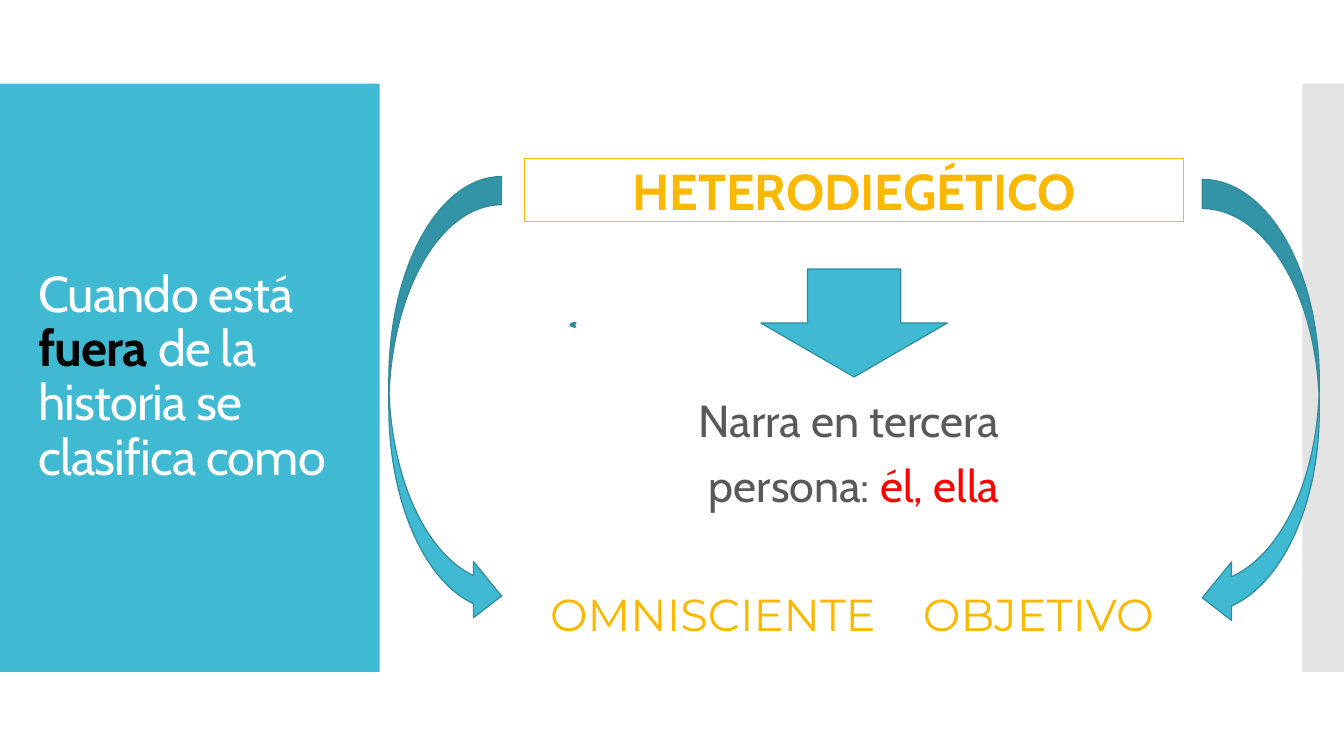
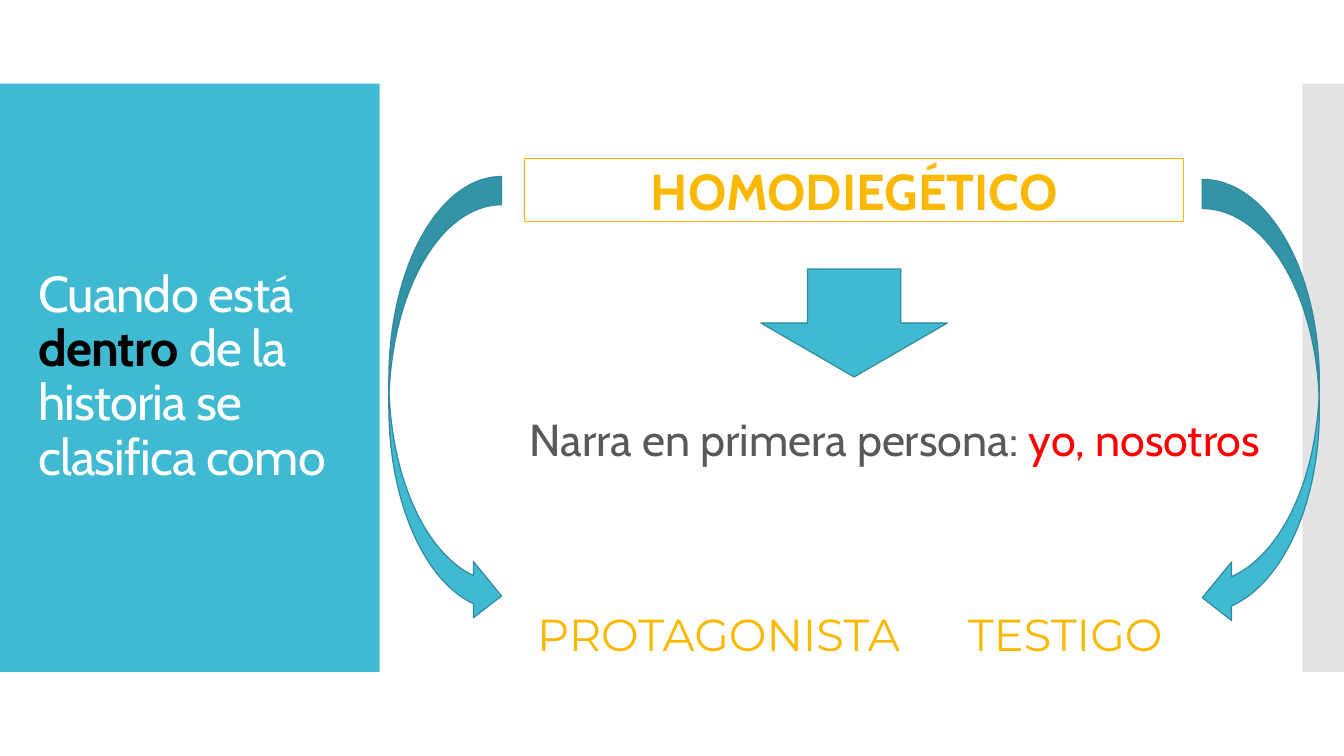
from dataclasses import dataclass

from pptx import Presentation
from pptx.dml.color import RGBColor
from pptx.enum.shapes import MSO_SHAPE as Preset
from pptx.enum.text import MSO_ANCHOR as Anchor, MSO_AUTO_SIZE as AutoSize, PP_ALIGN as Align
from pptx.oxml.ns import qn
from pptx.util import Cm, Pt
from lxml.etree import SubElement

# Shared style
BLUE, BLUE_EDGE, GREY = "40BAD2", "2F8A9B", "C8C8C8"
WHITE, BLACK, TEXT, RED, GOLD = "FFFFFF", "000000", "595959", "FF0000", "FAB900"
BODY_FONT, ROLE_FONT = "Cabin", "Montserrat"
EDGE_WIDTH = Pt(0.85)


@dataclass
class Box:
    """A region in centimetres."""
    left: float
    top: float
    width: float
    height: float

    def inside(self, dx, dy, width, height):
        return Box(self.left + dx, self.top + dy, width, height)

    def around(self, center_x, center_y, width, height):
        return self.inside(center_x - width / 2, center_y - height / 2, width, height)

    def lengths(self):
        return Cm(self.left), Cm(self.top), Cm(self.width), Cm(self.height)


SLIDE = Box(0, 0, 33.87, 19.05)
PANEL = Box(0, 2.11, 9.57, 14.82)
SIDE_BAR = Box(32.82, 2.11, 1.05, 14.82)
DIAGRAM = Box(9.8, 3.99, 23.45, 12.95)


def color(hex_string):
    return RGBColor.from_string(hex_string)


def add_preset(slide, preset, box, fill, edge=None):
    shape = slide.shapes.add_shape(preset, *box.lengths())
    shape.shadow.inherit = False
    shape.fill.solid()
    shape.fill.fore_color.rgb = color(fill)
    if edge:
        shape.line.color.rgb = color(edge)
        shape.line.width = EDGE_WIDTH
    else:
        shape.line.fill.background()
    return shape


def write_runs(paragraph, runs, size, font=BODY_FONT):
    """Write (text, colour, bold) runs into a paragraph."""
    for text, run_color, bold in runs:
        run = paragraph.add_run()
        run.text = text
        run.font.size = Pt(size)
        run.font.name = font
        run.font.bold = bold
        run.font.color.rgb = color(run_color)


def add_centered_text(slide, box, lines, font=BODY_FONT):
    """Add a text box with one centred paragraph for each list of runs."""
    text_frame = slide.shapes.add_textbox(*box.lengths()).text_frame
    text_frame.word_wrap = True
    text_frame.vertical_anchor = Anchor.MIDDLE
    for index, runs in enumerate(lines):
        paragraph = text_frame.add_paragraph() if index else text_frame.paragraphs[0]
        paragraph.alignment = Align.CENTER
        paragraph.line_spacing = 0.9
        paragraph.space_before = Pt(12 if index else 0)
        write_runs(paragraph, runs, 32, font)


def move_bands_to_layout(slide):
    """Put the blue panel and the translucent side bar on the slide's layout."""
    panel = add_preset(slide, Preset.RECTANGLE, PANEL, BLUE)
    side_bar = add_preset(slide, Preset.RECTANGLE, SIDE_BAR, GREY)
    fill_color = side_bar.element.spPr.find(qn("a:solidFill"))[0]
    SubElement(fill_color, qn("a:alpha")).set("val", "50000")
    for band in (panel, side_bar):
        slide.slide_layout.shapes.element.append(band.element)


def place_title(slide, panel, place):
    title = slide.shapes.title
    box = panel.inside(0.71, 1.01, 8.18, 12.78)
    title.left, title.top, title.width, title.height = box.lengths()
    text_frame = title.text_frame
    text_frame.auto_size = AutoSize.NONE
    text_frame.word_wrap = True
    text_frame.vertical_anchor = Anchor.MIDDLE
    paragraph = text_frame.paragraphs[0]
    paragraph.alignment = Align.LEFT
    paragraph.line_spacing = 0.9
    write_runs(paragraph, [("Cuando está ", WHITE, False), (place, BLACK, True),
                           (" de la historia se clasifica como", WHITE, False)], 36)
    # Slightly tightened letters
    for run in paragraph.runs:
        run.font._element.set("spc", "-60")


def draw_diagram(slide, box, content):
    middle = box.width / 2

    # Narration and the two roles
    shift, center_y = content["narration_at"]
    add_centered_text(slide, box.around(middle + shift, center_y, 20, 4), content["narration"])
    for role, center_x in content["roles"]:
        role_box = box.around(center_x, content["roles_y"], 11, 1.8)
        add_centered_text(slide, role_box, [[(role, GOLD, False)]], ROLE_FONT)

    # Arrows
    arrows = [
        (Preset.DOWN_ARROW, box.inside(middle - 2.35, 2.79, 4.7, 2.72)),
        (Preset.CURVED_RIGHT_ARROW, box.inside(0, 0.46, 2.84, 11.28)),
        (Preset.CURVED_LEFT_ARROW, box.inside(box.width - 2.95, 0.53, 2.95, 11.28)),
    ]
    if content["small_arrow"]:
        arrows.append((Preset.CURVED_RIGHT_ARROW, box.inside(4.58, 4.14, 0.13, 0.13)))
    for preset, arrow_box in arrows:
        add_preset(slide, preset, arrow_box, BLUE, BLUE_EDGE)

    # Framed heading
    heading_box = box.inside(middle - 8.3, 0, 16.6, 1.6)
    heading = add_preset(slide, Preset.RECTANGLE, heading_box, WHITE, GOLD)
    heading.text_frame.vertical_anchor = Anchor.MIDDLE
    paragraph = heading.text_frame.paragraphs[0]
    paragraph.alignment = Align.CENTER
    write_runs(paragraph, [(content["heading"], GOLD, True)], 36)


NARRATORS = [
    {
        "place": "fuera",
        "heading": "HETERODIEGÉTICO",
        "narration": [[("Narra en tercera ", TEXT, False)],
                      [("persona: ", TEXT, False), ("él, ella", RED, False)]],
        "narration_at": (0, 7.49),
        "roles": [("OMNISCIENTE", 8.17), ("OBJETIVO", 16.37)],
        "roles_y": 11.55,
        "small_arrow": True,
    },
    {
        "place": "dentro",
        "heading": "HOMODIEGÉTICO",
        "narration": [[("Narra en primera persona: ", TEXT, False),
                       ("yo, nosotros", RED, False)]],
        "narration_at": (1.03, 7.16),
        "roles": [("PROTAGONISTA", 8.31), ("TESTIGO", 17.05)],
        "roles_y": 12.06,
        "small_arrow": False,
    },
]


def main():
    presentation = Presentation()
    presentation.slide_width, presentation.slide_height = SLIDE.lengths()[2:]
    title_only = presentation.slide_layouts[5]
    for index, content in enumerate(NARRATORS):
        slide = presentation.slides.add_slide(title_only)
        if index == 0:
            move_bands_to_layout(slide)
        place_title(slide, PANEL, content["place"])
        draw_diagram(slide, DIAGRAM, content)
    presentation.save("out.pptx")


if __name__ == "__main__":
    main()
